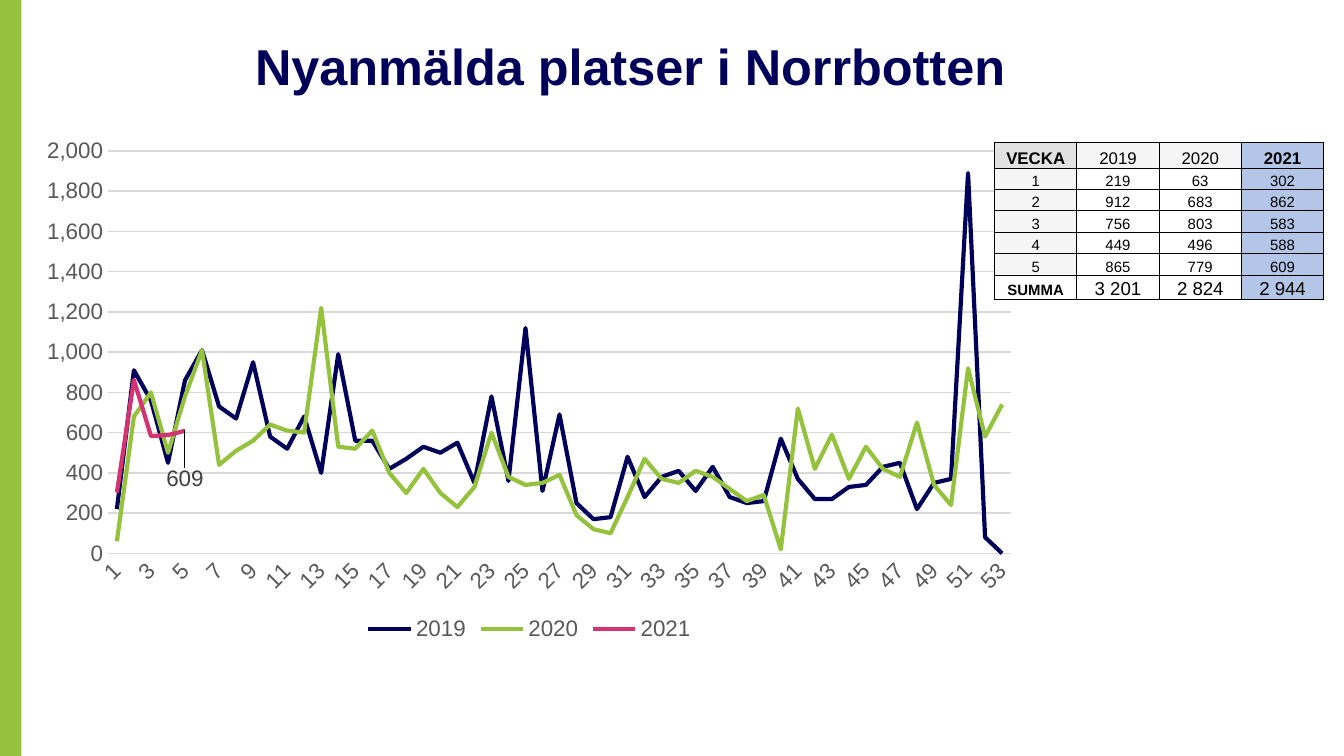
from lxml.etree import SubElement
from pptx import Presentation
from pptx.chart.data import CategoryChartData
from pptx.dml.color import RGBColor
from pptx.enum.chart import (XL_CHART_TYPE, XL_LABEL_POSITION, XL_LEGEND_POSITION,
                             XL_MARKER_STYLE, XL_TICK_MARK)
from pptx.enum.shapes import MSO_SHAPE
from pptx.enum.text import MSO_ANCHOR, PP_ALIGN
from pptx.oxml import parse_xml
from pptx.oxml.ns import nsdecls, qn
from pptx.util import Inches, Pt

NAVY = RGBColor(0x00, 0x00, 0x5A)
GREEN = RGBColor(0x95, 0xC2, 0x3D)
PINK = RGBColor(0xD4, 0x33, 0x72)
BLACK = RGBColor(0, 0, 0)
WHITE = RGBColor(0xFF, 0xFF, 0xFF)
GREY = RGBColor(0x59, 0x59, 0x59)
DARK = RGBColor(0x40, 0x40, 0x40)
RULE = RGBColor(0xD9, 0xD9, 0xD9)
HEAD = RGBColor(0xE1, 0xE1, 0xE1)
PALE = RGBColor(0xF5, 0xF5, 0xF5)
BLUE = RGBColor(0xB4, 0xC6, 0xE7)

YEARS = ("2019", "2020", "2021")
# Places per week for each year: the first five weeks are also tabled
WEEKS = [(219, 63, 302), (912, 683, 862), (756, 803, 583), (449, 496, 588), (865, 779, 609)]
LATER = {
    "2019": [1010, 730, 670, 950, 580, 520, 680, 400, 990, 560, 560, 420, 470, 530, 500, 550,
             350, 780, 360, 1120, 310, 690, 250, 170, 180, 480, 280, 380, 410, 310, 430, 280,
             250, 260, 570, 370, 270, 270, 330, 340, 430, 450, 220, 350, 370, 1890, 80, 0],
    "2020": [1010, 440, 510, 560, 640, 610, 600, 1220, 530, 520, 610, 400, 300, 420, 300, 230,
             330, 600, 380, 340, 350, 390, 190, 120, 100, 280, 470, 370, 350, 410, 380, 320,
             260, 290, 20, 720, 420, 590, 370, 530, 420, 380, 650, 340, 240, 920, 580, 740],
    "2021": [None] * 48,
}


def style(font, size=12, color=GREY, bold=False):
    font.name, font.size, font.bold = "Arial", Pt(size), bold
    font.color.rgb = color


def write(frame, text, size=8, color=BLACK, bold=False):
    part = frame.paragraphs[0]
    part.alignment = PP_ALIGN.CENTER
    run = part.add_run()
    run.text = text
    style(run.font, size, color, bold)


class Deck:
    def __init__(self):
        self.show = Presentation()
        self.show.slide_width = Inches(10)
        self.show.slide_height = Inches(10) * 9 // 16
        self.slide = self.show.slides.add_slide(self.show.slide_layouts[6])

    def bar(self, x, y, w, h, color):
        bar = self.slide.shapes.add_shape(
            MSO_SHAPE.RECTANGLE, Inches(x), Inches(y), Inches(w), Inches(h))
        bar.shadow.inherit = False
        bar.fill.solid()
        bar.fill.fore_color.rgb = color
        bar.line.fill.background()

    def title(self, x, y, w, h, text):
        frame = self.slide.shapes.add_textbox(
            Inches(x), Inches(y), Inches(w), Inches(h)).text_frame
        frame.word_wrap = True
        frame.vertical_anchor = MSO_ANCHOR.BOTTOM
        frame.margin_left = frame.margin_right = frame.margin_top = frame.margin_bottom = 0
        write(frame, text, size=27, color=NAVY, bold=True)

    def chart(self, x, y, w, h, data, colors):
        chart = self.slide.shapes.add_chart(
            XL_CHART_TYPE.LINE, Inches(x), Inches(y), Inches(w), Inches(h), data).chart
        style(chart.font, 10, BLACK)
        chart.has_title = False
        chart.has_legend = True
        chart.legend.position = XL_LEGEND_POSITION.BOTTOM
        chart.legend.include_in_layout = False
        style(chart.legend.font)
        chart.plots[0].vary_by_categories = False

        # Axes
        weeks, count = chart.category_axis, chart.value_axis
        for axis in (weeks, count):
            axis.major_tick_mark = axis.minor_tick_mark = XL_TICK_MARK.NONE
            style(axis.tick_labels.font)
        weeks.format.line.color.rgb = RULE
        weeks.format.line.width = Pt(0.75)
        weeks._element.find(qn("c:txPr")).find(qn("a:bodyPr")).set("rot", "-2700000")
        count.minimum_scale, count.maximum_scale, count.major_unit = 0, 2000, 200
        count.format.line.fill.background()
        count.major_gridlines.format.line.color.rgb = RULE
        count.major_gridlines.format.line.width = Pt(0.75)
        count.tick_labels.number_format = "#,##0"
        count.tick_labels.number_format_is_linked = False

        # Lines
        for line, color in zip(chart.plots[0].series, colors):
            line.smooth = False
            line.marker.style = XL_MARKER_STYLE.NONE
            line.format.line.color.rgb = color
            line.format.line.width = Pt(2.25)
        self.place(chart)
        return chart

    def place(self, chart):
        area = chart._chartSpace.chart.plotArea
        for old in area.findall(qn("c:layout")):
            area.remove(old)
        area.insert(0, parse_xml(
            f'<c:layout {nsdecls("c")}><c:manualLayout><c:layoutTarget val="inner"/>'
            '<c:xMode val="edge"/><c:yMode val="edge"/><c:x val="0.08"/><c:y val="0.04"/>'
            '<c:w val="0.9"/><c:h val="0.78"/></c:manualLayout></c:layout>'))

    def label(self, line, spot, dx, dy):
        line.data_labels.show_value = False
        label = line.points[spot].data_label
        style(label.font, color=DARK)
        label.position = XL_LABEL_POSITION.BELOW
        group = line.data_labels._element
        mark = group.find(qn("c:dLbl"))
        mark.find(qn("c:idx")).addnext(parse_xml(
            f'<c:layout {nsdecls("c")}><c:manualLayout><c:x val="{dx}"/>'
            f'<c:y val="{dy}"/></c:manualLayout></c:layout>'))
        # Leader line from the point to its label
        for old in group.findall(qn("c:showLeaderLines")):
            group.remove(old)
        group.append(parse_xml(
            f'<c:extLst {nsdecls("c")}><c:ext uri="{{CE6537A1-D6FC-4f65-9D91-7224C49458BB}}" '
            'xmlns:c15="http://schemas.microsoft.com/office/drawing/2012/chart">'
            '<c15:showLeaderLines val="1"/></c:ext></c:extLst>'))

    def table(self, x, y, w, rows):
        high = [0.19] + [0.16] * (len(rows) - 1)
        table = self.slide.shapes.add_table(
            len(rows), len(rows[0]), Inches(x), Inches(y), Inches(w), Inches(sum(high))).table
        table.first_row = table.horz_banding = False
        for col in table.columns:
            col.width = Inches(w / len(rows[0]))
        for r, row in enumerate(rows):
            table.rows[r].height = Inches(high[r])
            for c, text in enumerate(row):
                self.cell(table.cell(r, c), text, r, c, r == len(rows) - 1)

    def cell(self, cell, text, r, c, last):
        cell.margin_left = cell.margin_right = cell.margin_top = Inches(0.01)
        cell.margin_bottom = 0
        cell.vertical_anchor = MSO_ANCHOR.BOTTOM
        size = 9 if r == 0 else 10 if last and c else 8
        write(cell.text_frame, text, size=size,
              bold=(r == 0 and c in (0, 3)) or (last and c == 0))
        # Borders come before the fill
        for side in ("a:lnL", "a:lnR", "a:lnT", "a:lnB"):
            edge = SubElement(cell._tc.get_or_add_tcPr(), qn(side), w=str(Pt(0.5)))
            solid = SubElement(edge, qn("a:solidFill"))
            SubElement(solid, qn("a:srgbClr"), val=str(BLACK))
        if last and c < 3:
            cell.fill.background()
            return
        cell.fill.solid()
        cell.fill.fore_color.rgb = (
            BLUE if c == 3 else HEAD if r == c == 0 else PALE if r == 0 or c == 0 else WHITE)


def main():
    deck = Deck()

    # Side bar and title
    deck.bar(0, 0, 0.16, 5.63, GREEN)
    deck.title(0.63, 0.12, 8.12, 0.59, "Nyanmälda platser i Norrbotten")

    # Weekly chart: past years in tens, the current year exact
    data = CategoryChartData(number_format="General")
    data.categories = [str(week) for week in range(1, 54)]
    first = list(zip(*WEEKS))
    for year, start in zip(YEARS, first):
        exact = year == YEARS[-1]
        data.add_series(year, [n if exact else round(n, -1) for n in start] + LATER[year])
    chart = deck.chart(0.21, 0.97, 7.46, 3.84, data, (NAVY, GREEN, PINK))
    deck.label(chart.plots[0].series[2], 4, 0, 0.06)

    # Table of the first weeks with their sums
    rows = [["VECKA", *YEARS]]
    rows += [[str(n), *map(str, week)] for n, week in enumerate(WEEKS, 1)]
    rows.append(["SUMMA", *(f"{sum(part):,}".replace(",", " ") for part in first)])
    deck.table(7.4, 1.06, 2.45, rows)

    deck.show.save("out.pptx")


if __name__ == "__main__":
    main()
